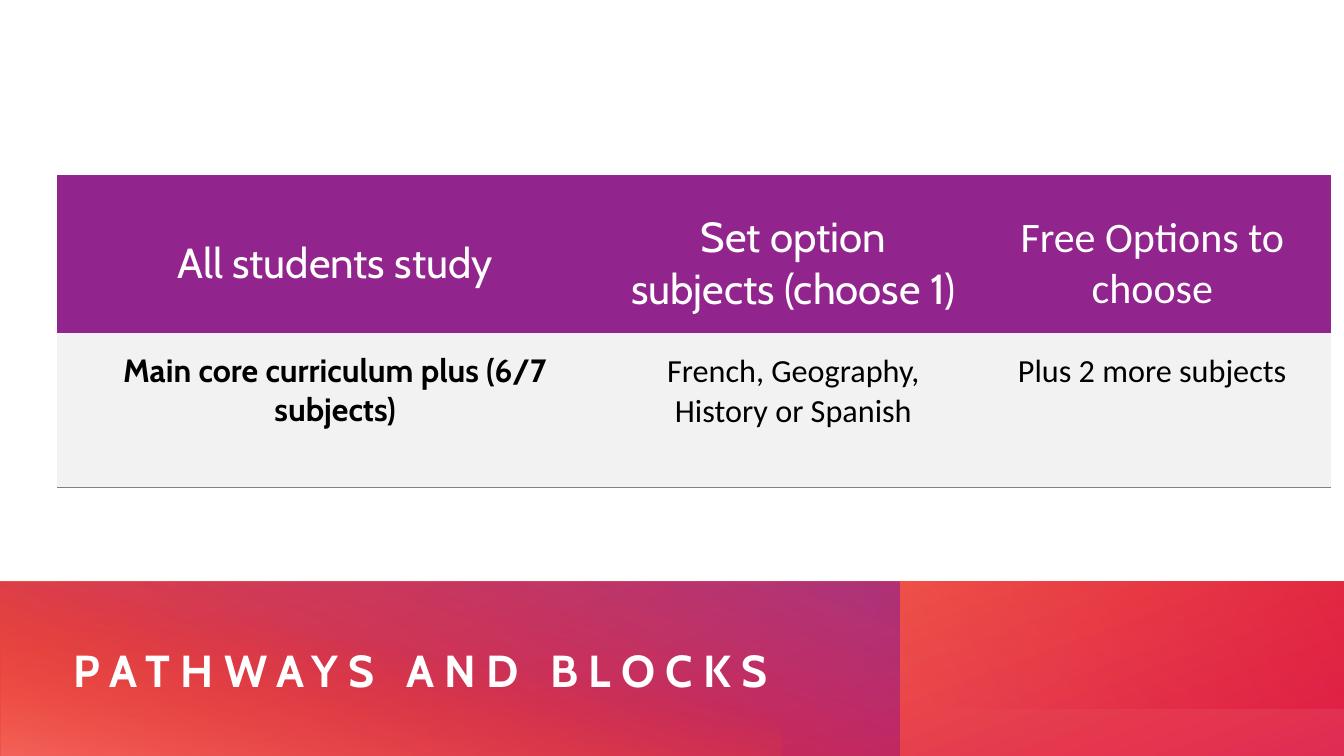
from dataclasses import dataclass

from pptx import Presentation
from pptx.dml.color import RGBColor
from pptx.enum.shapes import MSO_SHAPE
from pptx.enum.text import MSO_ANCHOR, PP_ALIGN
from pptx.oxml import parse_xml
from pptx.oxml.ns import nsdecls, qn
from pptx.util import Inches, Pt


@dataclass(frozen=True)
class Theme:
    heading_font: str = "Cabin"
    body_font: str = "Calibri"
    white: str = "FFFFFF"
    black: str = "000000"
    purple: str = "92248E"
    red: str = "DA002F"
    orange: str = "FE4A00"
    peach: str = "FF907A"
    pale_grey: str = "F2F2F2"
    rule_grey: str = "808080"
    title_size: int = 32
    header_size: int = 30
    body_size: int = 23


THEME = Theme()
TITLE_SPACING = 750
PLAIN_TABLE_STYLE = "{2D5ABB26-0587-4C30-8999-92F81FD0307C}"

# (left, top, width, height), rotation, mirrored, angle, stops (position, colour, opacity)
BAND_LAYERS = [
    ((0, 5.77, 13.34, 1.76), 0, False, 250,
     [(0, THEME.red, 83), (100, THEME.orange, 74)]),
    ((3.58, 2.19, 1.76, 8.92), 90, True, 160,
     [(5, THEME.purple, 68), (100, THEME.red, 43)]),
    ((3, 2.77, 1.76, 7.75), 270, False, 190,
     [(42, THEME.orange, 0), (99, THEME.peach, 48)]),
    ((5.39, 5.77, 7.96, 1.26), 180, False, 330,
     [(0, THEME.red, 37), (56, THEME.red, 0)]),
]

COLUMN_WIDTHS = [5.51, 3.58, 3.54]
ROW_HEIGHTS = [1.56, 1.54]
HEADERS = [
    ("All students study", THEME.heading_font),
    ("Set option subjects (choose 1)", THEME.heading_font),
    ("Free Options to choose", THEME.body_font),
]
SUBJECTS = [
    ("Main core curriculum plus (6/7 subjects)", THEME.heading_font),
    ("French, Geography, History or Spanish", THEME.body_font),
    ("Plus 2\u00a0more subjects", THEME.body_font),
]


def style_text(paragraph, font_name, size, colour, bold=False):
    for run in paragraph.runs:
        run.font.name = font_name
        run.font.size = Pt(size)
        run.font.bold = bold
        run.font.color.rgb = RGBColor.from_string(colour)


def set_gradient(shape, angle, stops):
    """Fill with a linear gradient whose stops carry their own opacity."""
    shape.fill.gradient()
    gradient = shape._element.spPr.find(qn("a:gradFill"))
    stop_xml = "".join(
        f'<a:gs pos="{position * 1000}"><a:srgbClr val="{colour}">'
        f'<a:alpha val="{opacity * 1000}"/></a:srgbClr></a:gs>'
        for position, colour, opacity in stops
    )
    gradient.getparent().replace(gradient, parse_xml(
        f'<a:gradFill {nsdecls("a")} rotWithShape="1"><a:gsLst>{stop_xml}</a:gsLst>'
        f'<a:lin ang="{angle * 60000}" scaled="0"/></a:gradFill>'
    ))


def add_band_layer(slide, box, rotation, mirrored, angle, stops):
    shape = slide.shapes.add_shape(MSO_SHAPE.RECTANGLE, *map(Inches, box))
    shape.shadow.inherit = False
    shape.line.fill.background()
    shape.rotation = rotation
    if mirrored:
        shape._element.spPr.find(qn("a:xfrm")).set("flipH", "1")
    set_gradient(shape, angle, stops)


def add_title(slide, text):
    title = slide.shapes.title
    title.left, title.top, title.width, title.height = map(Inches, (0.73, 6.07, 7.88, 1.15))
    frame = title.text_frame
    frame.text = text
    frame.word_wrap = True
    frame.vertical_anchor = MSO_ANCHOR.MIDDLE
    frame.margin_left = frame.margin_right = frame.margin_top = frame.margin_bottom = 0
    paragraph = frame.paragraphs[0]
    paragraph.alignment = PP_ALIGN.LEFT
    style_text(paragraph, THEME.heading_font, THEME.title_size, THEME.white, bold=True)
    paragraph.runs[0].font._element.set("spc", str(TITLE_SPACING))
    # Bring the title in front of the band
    slide.shapes._spTree.append(title._element)


def set_bottom_border(cell, colour, width):
    properties = cell._tc.get_or_add_tcPr()
    properties.insert(0, parse_xml(
        f'<a:lnB {nsdecls("a")} w="{Pt(width)}"><a:solidFill>'
        f'<a:srgbClr val="{colour}"/></a:solidFill></a:lnB>'
    ))


def fill_cell(cell, text, font_name, size, colour, background, anchor, bold=False):
    cell.text = text
    cell.vertical_anchor = anchor
    cell.margin_left = cell.margin_right = Inches(0.14)
    cell.margin_top, cell.margin_bottom = Inches(0.19), 0
    cell.fill.solid()
    cell.fill.fore_color.rgb = RGBColor.from_string(background)
    paragraph = cell.text_frame.paragraphs[0]
    paragraph.alignment = PP_ALIGN.CENTER
    style_text(paragraph, font_name, size, colour, bold)


def add_options_table(slide):
    table = slide.shapes.add_table(
        len(ROW_HEIGHTS), len(COLUMN_WIDTHS), Inches(0.57), Inches(1.74),
        Inches(sum(COLUMN_WIDTHS)), Inches(sum(ROW_HEIGHTS)),
    ).table
    table.horz_banding = False
    table._tbl.tblPr.find(qn("a:tableStyleId")).text = PLAIN_TABLE_STYLE
    for column, width in zip(table.columns, COLUMN_WIDTHS):
        column.width = Inches(width)
    for row, height in zip(table.rows, ROW_HEIGHTS):
        row.height = Inches(height)

    for index, (text, font_name) in enumerate(HEADERS):
        fill_cell(table.cell(0, index), text, font_name, THEME.header_size,
                  THEME.white, THEME.purple, MSO_ANCHOR.MIDDLE)
    for index, (text, font_name) in enumerate(SUBJECTS):
        cell = table.cell(1, index)
        fill_cell(cell, text, font_name, THEME.body_size, THEME.black,
                  THEME.pale_grey, MSO_ANCHOR.TOP, bold=index == 0)
        set_bottom_border(cell, THEME.rule_grey, 0.75)


def main():
    presentation = Presentation()
    presentation.slide_width = Inches(13.33)
    presentation.slide_height = Inches(7.5)
    title_only = presentation.slide_layouts[5]
    slide = presentation.slides.add_slide(title_only)
    slide.background.fill.solid()
    slide.background.fill.fore_color.rgb = RGBColor.from_string(THEME.white)
    for layer in BAND_LAYERS:
        add_band_layer(slide, *layer)
    add_title(slide, "PATHWAYS AND BLOCKS")
    add_options_table(slide)
    presentation.save("out.pptx")


if __name__ == "__main__":
    main()
